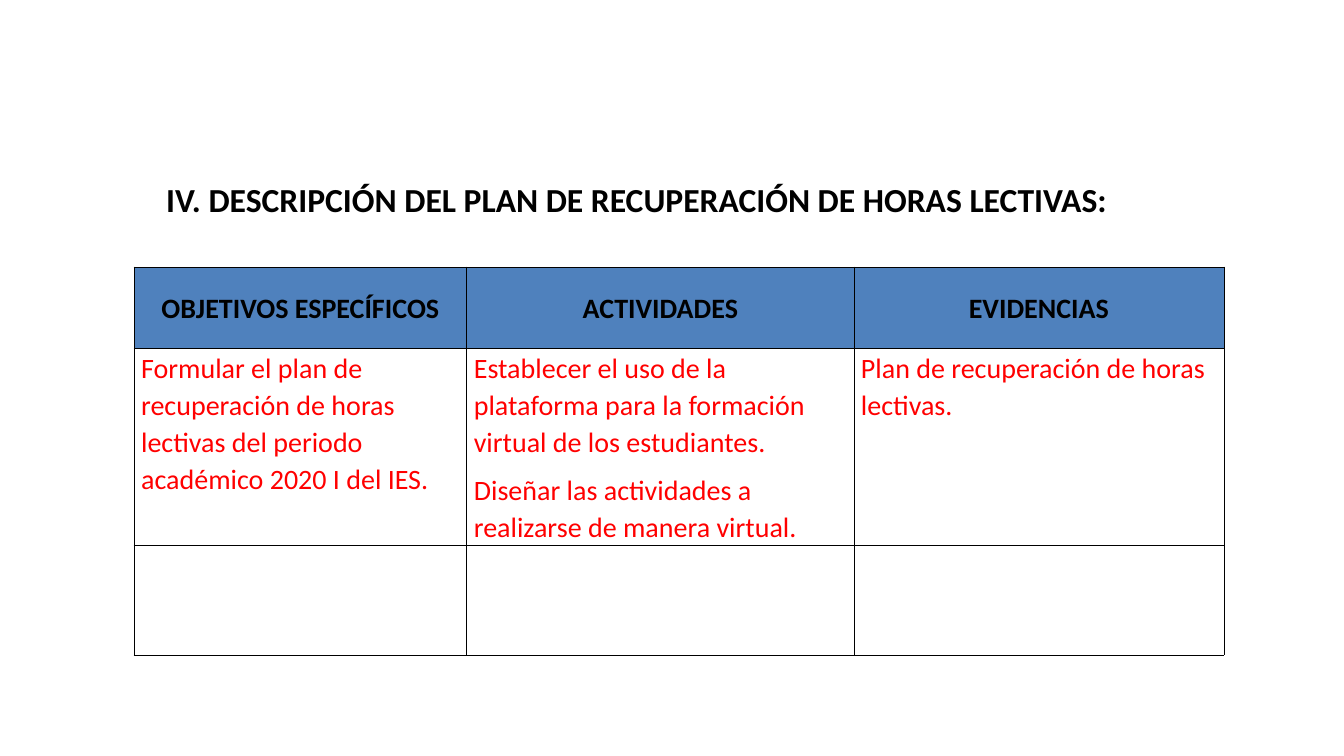
import pptx
import pptx.util
import pptx.dml.color
import pptx.enum.text
import pptx.oxml
import pptx.oxml.ns
from dataclasses import dataclass

Inches = pptx.util.Inches
Pt = pptx.util.Pt
ALIGN = pptx.enum.text.PP_ALIGN
ANCHOR = pptx.enum.text.MSO_ANCHOR
NS = pptx.oxml.ns.nsdecls("a")


@dataclass(frozen=True)
class Theme:
    font: str = "Calibri"
    ink: str = "000000"
    red: str = "FF0000"
    blue: str = "4F81BD"
    title: int = 24
    body: int = 20
    line: float = 0.75
    space: float = 1.08


THEME = Theme()

HEADS = ["OBJETIVOS ESPECÍFICOS", "ACTIVIDADES", "EVIDENCIAS"]
PLAN = [
    ["Formular el plan de recuperación de horas lectivas del periodo "
     "académico 2020 I del IES."],
    ["Establecer el uso de la plataforma para la formación virtual de "
     "los estudiantes.",
     "Diseñar las actividades a realizarse de manera virtual."],
    ["Plan de recuperación de horas lectivas."],
]


def color(code):
    return pptx.dml.color.RGBColor.from_string(code)


def add_run(para, text, size, code, bold=False):
    para.line_spacing = THEME.space
    run = para.add_run()
    run.text = text
    run.font.name = THEME.font
    run.font.size = Pt(size)
    run.font.bold = bold
    run.font.color.rgb = color(code)


def number(para, start):
    """Give the paragraph a Roman number with a hanging indent."""
    props = para._p.get_or_add_pPr()
    props.set("marL", str(Inches(0.5)))
    props.set("indent", str(Inches(-0.42)))
    for xml in (
        f'<a:buClr {NS}><a:srgbClr val="{THEME.ink}"/></a:buClr>',
        f'<a:buFont {NS} typeface="{THEME.font}"/>',
        f'<a:buAutoNum {NS} type="romanUcPeriod" startAt="{start}"/>',
    ):
        props.append(pptx.oxml.parse_xml(xml))


def add_title(slide, text):
    box = slide.shapes.add_textbox(
        Inches(1.47), Inches(1.55), Inches(10.82), Inches(0.82))
    frame = box.text_frame
    frame.word_wrap = True
    frame.vertical_anchor = ANCHOR.MIDDLE
    frame.margin_left = frame.margin_right = Inches(0.1)
    frame.margin_top = frame.margin_bottom = Inches(0.1)
    para = frame.paragraphs[0]
    number(para, 4)
    add_run(para, text, THEME.title, THEME.ink, True)


def style(cell, fill=None):
    """Draw the four borders, then set fill and margins."""
    props = cell._tc.get_or_add_tcPr()
    for side in "LRTB":
        props.append(pptx.oxml.parse_xml(
            f'<a:ln{side} {NS} w="{Pt(THEME.line)}"><a:solidFill>'
            f'<a:srgbClr val="{THEME.ink}"/></a:solidFill></a:ln{side}>'))
    if fill:
        cell.fill.solid()
        cell.fill.fore_color.rgb = color(fill)
    else:
        cell.fill.background()
    cell.margin_left = cell.margin_right = Inches(0.07)
    cell.margin_top = cell.margin_bottom = 0


def write(cell, texts):
    frame = cell.text_frame
    for i, text in enumerate(texts):
        para = frame.add_paragraph() if i else frame.paragraphs[0]
        if i:
            para.space_before = Pt(8)
        add_run(para, text, THEME.body, THEME.red)


def add_grid(slide):
    wide, high = [3.3, 3.84, 3.67], [0.81, 1.92, 1.09]
    grid = slide.shapes.add_table(
        len(high), len(wide), Inches(1.33), Inches(2.65),
        Inches(sum(wide)), Inches(sum(high))).table
    grid.first_row = grid.horz_banding = False
    for row, size in zip(grid.rows, high):
        row.height = Inches(size)
    for col, size in enumerate(wide):
        grid.columns[col].width = Inches(size)
        head, body, last = [grid.cell(row, col) for row in range(3)]
        # Header
        style(head, THEME.blue)
        head.vertical_anchor = ANCHOR.MIDDLE
        para = head.text_frame.paragraphs[0]
        para.alignment = ALIGN.CENTER
        add_run(para, HEADS[col], THEME.body, THEME.ink, True)
        # Plan and empty row
        style(body)
        write(body, PLAN[col])
        style(last)


def main():
    deck = pptx.Presentation()
    deck.slide_width, deck.slide_height = Inches(13.33), Inches(7.5)
    slide = deck.slides.add_slide(deck.slide_layouts[6])
    add_grid(slide)
    add_title(slide, "DESCRIPCIÓN DEL PLAN DE RECUPERACIÓN DE HORAS LECTIVAS:")
    deck.save("out.pptx")


if __name__ == "__main__":
    main()
